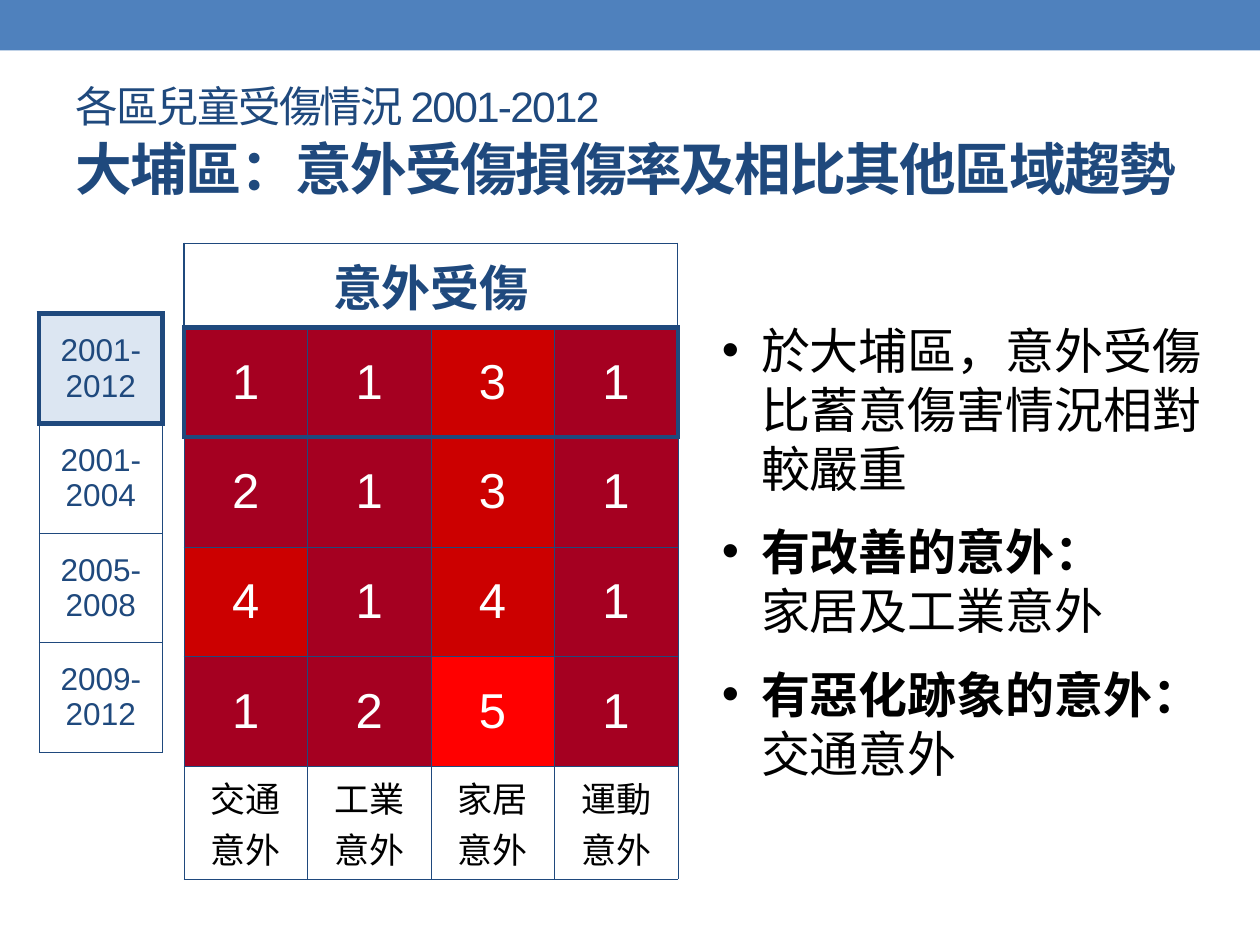
from lxml.etree import SubElement
from pptx import Presentation
from pptx.dml.color import RGBColor
from pptx.enum.shapes import MSO_SHAPE
from pptx.enum.text import MSO_ANCHOR, MSO_AUTO_SIZE, PP_ALIGN
from pptx.oxml.ns import qn
from pptx.util import Inches, Pt

COLORS = {
    "bar": "4F81BD", "navy": "1F497D", "pale": "DCE6F2", "white": "FFFFFF",
    "black": "000000", "worst": "A50021", "high": "CC0000", "medium": "FF0000",
}
RANK_COLORS = {1: "worst", 2: "worst", 3: "high", 4: "high", 5: "medium"}
THIN, FRAME, THICK = 0.25, 0.75, 3
ROW_HEIGHT = 0.87
COLUMN_WIDTH = 0.98

PERIODS = ["2001-2012", "2001-2004", "2005-2008", "2009-2012"]
ACCIDENTS = ["交通意外", "工業意外", "家居意外", "運動意外"]
RANKS = [[1, 1, 3, 1], [2, 1, 3, 1], [4, 1, 4, 1], [1, 2, 5, 1]]
FINDINGS = [
    [("於大埔區，意外受傷比蓄意傷害情況相對較嚴重", False)],
    [("有改善的意外：", True), ("家居及工業意外", False)],
    [("有惡化跡象的意外：", True), ("交通意外", False)],
]


def rgb(name):
    return RGBColor.from_string(COLORS[name])


def set_attributes(target, values):
    for name, value in values.items():
        setattr(target, name, value)


def place(shape, box):
    lengths = map(Inches, box)
    set_attributes(shape, dict(zip(("left", "top", "width", "height"), lengths)))


def add_run(paragraph, text, size, color, bold=False):
    run = paragraph.add_run()
    run.text = text
    set_attributes(run.font, {"name": "Arial", "size": Pt(size), "bold": bold})
    run.font.color.rgb = rgb(color)
    return run


def set_borders(cell, widths):
    """Draw the cell's edges; widths are points for left, right, top, bottom."""
    properties = cell._tc.get_or_add_tcPr()
    for index, (side, width) in enumerate(zip("LRTB", widths)):
        line = SubElement(properties, qn(f"a:ln{side}"), w=str(int(Pt(width))))
        fill = SubElement(line, qn("a:solidFill"))
        SubElement(fill, qn("a:srgbClr"), val=COLORS["navy"])
        properties.insert(index, line)


def fill_cell(cell, text, size, color, fill=None, bold=False):
    cell.vertical_anchor = MSO_ANCHOR.MIDDLE
    paragraph = cell.text_frame.paragraphs[0]
    paragraph.alignment = PP_ALIGN.CENTER
    add_run(paragraph, text, size, color, bold)
    if fill:
        cell.fill.solid()
        cell.fill.fore_color.rgb = rgb(fill)
    else:
        cell.fill.background()


def add_plain_table(slide, left, top, columns, heights):
    box = map(Inches, (left, top, columns * COLUMN_WIDTH, sum(heights)))
    table = slide.shapes.add_table(len(heights), columns, *box).table
    set_attributes(table, {"first_row": False, "horz_banding": False})
    for column in table.columns:
        column.width = Inches(COLUMN_WIDTH)
    for row, height in zip(table.rows, heights):
        row.height = Inches(height)
    return table


def add_top_bar(slide, box):
    bar = slide.shapes.add_shape(MSO_SHAPE.RECTANGLE, *map(Inches, box))
    bar.shadow.inherit = False
    bar.fill.solid()
    bar.fill.fore_color.rgb = rgb("bar")
    bar.line.fill.background()


def fill_title(title, box):
    place(title, box)
    frame = title.text_frame
    set_attributes(frame, {
        "auto_size": MSO_AUTO_SIZE.NONE, "vertical_anchor": MSO_ANCHOR.TOP,
        "margin_top": Inches(0.04), "word_wrap": True,
    })
    lines = [("各區兒童受傷情況 2001-2012", 24.3, 29, False),
             ("大埔區：意外受傷損傷率及相比其他區域趨勢", 32.4, 40, True)]
    frame.add_paragraph()
    for paragraph, (text, size, spacing, bold) in zip(frame.paragraphs, lines):
        set_attributes(paragraph, {
            "alignment": PP_ALIGN.LEFT, "line_spacing": Pt(spacing),
            "space_before": Pt(0),
        })
        run = add_run(paragraph, text, size, "navy", bold)
        run.font._element.set("spc", "-100")


def add_rank_table(slide, left, top):
    """Ranks by period and accident, with the whole period framed."""
    heights = [0.67] + [ROW_HEIGHT] * len(RANKS) + [0.9]
    last = len(ACCIDENTS) - 1
    table = add_plain_table(slide, left, top, len(ACCIDENTS), heights)

    heading = table.cell(0, 0)
    heading.merge(table.cell(0, last))
    fill_cell(heading, "意外受傷", 28, "navy", bold=True)
    for column in range(len(ACCIDENTS)):
        set_borders(table.cell(0, column), (FRAME, FRAME, FRAME, THICK))

    for row, ranks in enumerate(RANKS, start=1):
        for column, rank in enumerate(ranks):
            cell = table.cell(row, column)
            fill_cell(cell, str(rank), 28, "white", RANK_COLORS[rank])
            framed = row == 1
            set_borders(cell, (
                THICK if framed and column == 0 else THIN,
                THICK if framed and column == last else THIN,
                THICK if row <= 2 else THIN,
                THICK if framed else THIN,
            ))

    for column, accident in enumerate(ACCIDENTS):
        cell = table.cell(len(heights) - 1, column)
        fill_cell(cell, accident, 20, "black")
        set_borders(cell, [THIN] * 4)


def add_period_table(slide, left, top):
    table = add_plain_table(slide, left, top, 1, [ROW_HEIGHT] * len(PERIODS))
    for row, period in enumerate(PERIODS):
        cell = table.cell(row, 0)
        whole = row == 0
        fill_cell(cell, period, 18, "navy", "pale" if whole else None)
        side = THICK if whole else THIN
        set_borders(cell, (side, side, THICK if row <= 1 else THIN, side))


def fill_findings(body, box):
    place(body, box)
    frame = body.text_frame
    set_attributes(frame, {
        "auto_size": MSO_AUTO_SIZE.SHAPE_TO_FIT_TEXT, "word_wrap": True,
        "vertical_anchor": MSO_ANCHOR.TOP,
    })
    for index, finding in enumerate(FINDINGS):
        paragraph = frame.add_paragraph() if index else frame.paragraphs[0]
        set_attributes(paragraph, {
            "line_spacing": Pt(33.7), "space_before": Pt(14 if index else 0),
            "alignment": PP_ALIGN.LEFT,
        })
        properties = paragraph._p.get_or_add_pPr()
        properties.set("marL", str(Inches(0.31)))
        properties.set("indent", str(-Inches(0.31)))
        SubElement(properties, qn("a:buFont"), typeface="Arial")
        SubElement(properties, qn("a:buChar"), char="•")
        for part, (text, bold) in enumerate(finding):
            if part:
                paragraph.add_line_break()
            add_run(paragraph, text, 28, "black", bold)


def main():
    presentation = Presentation()
    presentation.slide_width = Inches(10)
    presentation.slide_height = Inches(7.5)
    slide = presentation.slides.add_slide(presentation.slide_layouts[1])
    add_top_bar(slide, (0, 0, 10, 0.4))
    fill_title(slide.shapes.title, (0.5, 0.6, 9, 1.28))
    add_rank_table(slide, 1.46, 1.93)
    add_period_table(slide, 0.31, 2.49)
    fill_findings(slide.placeholders[1], (5.63, 2.49, 4.09, 3.8))
    presentation.save("out.pptx")


if __name__ == "__main__":
    main()
